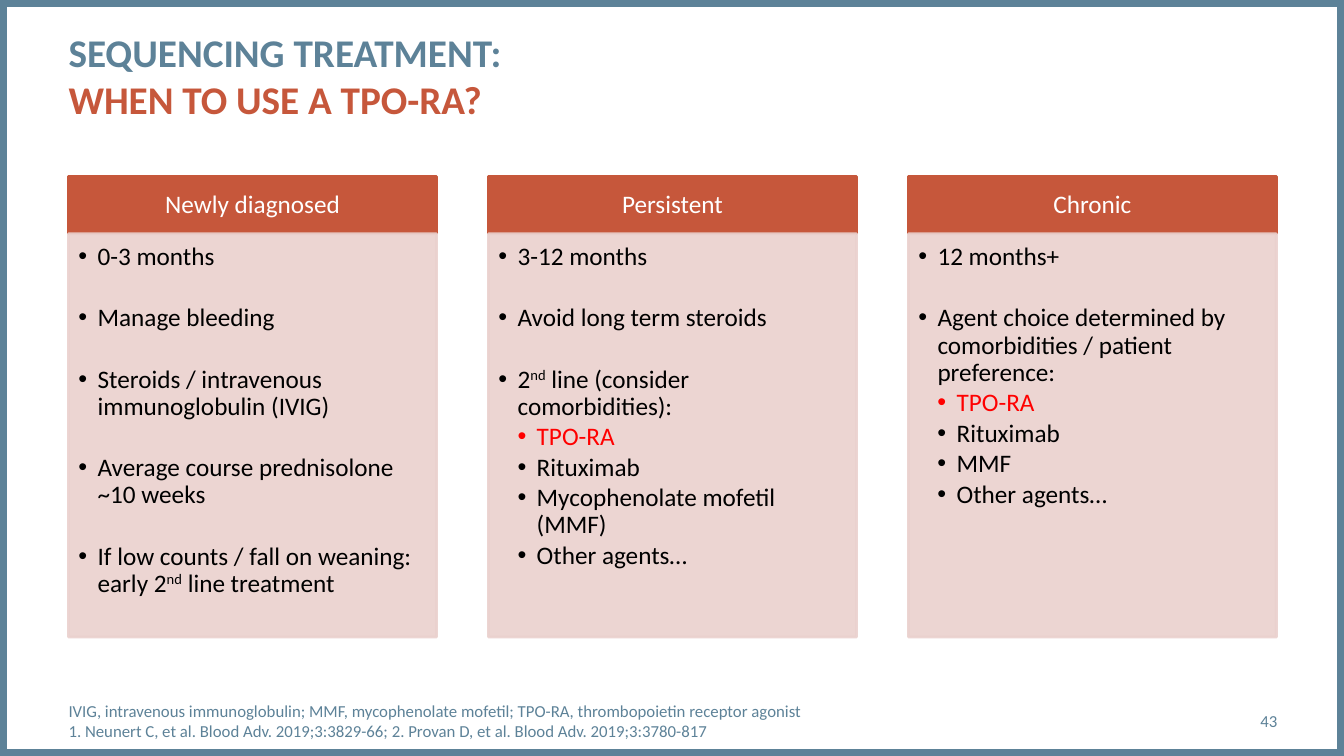
from dataclasses import dataclass
from lxml import etree
from pptx import Presentation
from pptx.dml.color import RGBColor
from pptx.enum.shapes import MSO_SHAPE
from pptx.enum.text import MSO_ANCHOR, MSO_AUTO_SIZE, PP_ALIGN
from pptx.oxml.ns import qn
from pptx.util import Inches, Pt

RECT = MSO_SHAPE.RECTANGLE
TOP, MIDDLE = MSO_ANCHOR.TOP, MSO_ANCHOR.MIDDLE
LEFT, CENTER, RIGHT = PP_ALIGN.LEFT, PP_ALIGN.CENTER, PP_ALIGN.RIGHT
NO_FIT = MSO_AUTO_SIZE.NONE

TITLE = ("SEQUENCING TREATMENT:", "WHEN TO USE A TPO-RA?")
STAGES = [
    ("Newly diagnosed", [
        (1, "0-3 months"),
        (1, "Manage bleeding"),
        (1, "Steroids / intravenous immunoglobulin (IVIG)"),
        (1, "Average course prednisolone ~10 weeks"),
        (1, "If low counts / fall on weaning: early 2^nd^ line treatment"),
    ]),
    ("Persistent", [
        (1, "3-12 months"),
        (1, "Avoid long term steroids"),
        (1, "2^nd^ line (consider comorbidities):"),
        (2, "TPO-RA"),
        (2, "Rituximab"),
        (2, "Mycophenolate mofetil (MMF)"),
        (2, "Other agents…"),
    ]),
    ("Chronic", [
        (1, "12 months+"),
        (1, "Agent choice determined by comorbidities / patient preference:"),
        (2, "TPO-RA"),
        (2, "Rituximab"),
        (2, "MMF"),
        (2, "Other agents…"),
    ]),
]
HIGHLIGHTED = "TPO-RA"
FOOTNOTE = (
    "IVIG, intravenous immunoglobulin; MMF, mycophenolate mofetil; TPO-RA, thrombopoietin receptor agonist",
    "1. Neunert C, et al. Blood Adv. 2019;3:3829-66; 2. Provan D, et al. Blood Adv. 2019;3:3780-817",
)
PAGE = "43"


@dataclass(frozen=True)
class Theme:
    font: str = "Calibri"
    blue: str = "5D8298"
    rust: str = "C6573B"
    pink: str = "EAD1CE"
    red: str = "FF0000"
    black: str = "000000"
    white: str = "FFFFFF"
    title: int = 28
    text: int = 18
    small: int = 12


THEME = Theme()
WIDTH, HEIGHT = 13.33, 7.5
MARGIN, RIGHT_EDGE = 0.68, 12.66
COL_W, HEAD_Y, HEAD_H, BODY_H = 3.65, 1.75, 0.57, 4
STEP = (RIGHT_EDGE - MARGIN - COL_W) / (len(STAGES) - 1)
INDENT = 0.19


def set_format(obj, values):
    for name, value in values.items():
        setattr(obj, name, value)


def frame_text(s, anchor, insets=(0, 0, 0, 0)):
    tf = s.text_frame
    set_format(tf, {"word_wrap": True, "auto_size": NO_FIT, "vertical_anchor": anchor})
    sides = ("margin_left", "margin_top", "margin_right", "margin_bottom")
    set_format(tf, {side: Inches(v) for side, v in zip(sides, insets)})
    return tf


def add_run(p, text, size, color, bold=False):
    r = p.add_run()
    r.text = text
    set_format(r.font, {"name": THEME.font, "size": Pt(size), "bold": bold})
    r.font.color.rgb = RGBColor.from_string(color)
    return r


def add_box(slide, x, y, w, h, fill, line, weight):
    s = slide.shapes.add_shape(RECT, Inches(x), Inches(y), Inches(w), Inches(h))
    s.shadow.inherit = False
    if fill:
        s.fill.solid()
        s.fill.fore_color.rgb = RGBColor.from_string(fill)
    else:
        s.fill.background()
    s.line.color.rgb = RGBColor.from_string(line)
    s.line.width = Pt(weight)
    return s


def add_small_text(slide, x, w, lines, align):
    s = slide.shapes.add_textbox(Inches(x), Inches(6.95), Inches(w), Inches(0.4))
    p = frame_text(s, MIDDLE).paragraphs[0]
    p.alignment = align
    for i, line in enumerate(lines):
        if i:
            p.add_line_break()
        add_run(p, line, THEME.small, THEME.blue)


def add_title(slide):
    s = slide.shapes.title
    set_format(s, {"left": Inches(MARGIN), "top": Inches(0.28),
                   "width": Inches(9.56), "height": Inches(0.94)})
    p = frame_text(s, TOP).paragraphs[0]
    p.alignment = LEFT
    add_run(p, TITLE[0], THEME.title, THEME.blue, True)
    p.add_line_break()
    add_run(p, TITLE[1], THEME.title, THEME.rust, True)


def add_bullet(p, level, text, first):
    before = 22 if level == 1 and not first else 0
    set_format(p, {"alignment": LEFT, "level": level, "line_spacing": 0.9,
                   "space_before": Pt(before), "space_after": Pt(2.3)})
    pPr = p._p.get_or_add_pPr()
    pPr.set("marL", str(Inches(INDENT * level)))
    pPr.set("indent", str(-Inches(INDENT)))
    etree.SubElement(pPr, qn("a:buFont")).set("typeface", "Arial")
    etree.SubElement(pPr, qn("a:buChar")).set("char", "•")
    color = THEME.red if text == HIGHLIGHTED else THEME.black
    for i, part in enumerate(text.split("^")):
        r = add_run(p, part, THEME.text, color)
        if i % 2:
            r.font._element.set("baseline", "30000")


def add_stage(slide, x, name, items):
    head = add_box(slide, x, HEAD_Y, COL_W, HEAD_H, THEME.rust, THEME.rust, 2)
    p = frame_text(head, MIDDLE, (0.14, 0.08, 0.14, 0.08)).paragraphs[0]
    set_format(p, {"alignment": CENTER, "line_spacing": 0.9})
    add_run(p, name, THEME.text, THEME.white)

    body = add_box(slide, x, HEAD_Y + HEAD_H, COL_W, BODY_H, THEME.pink, THEME.pink, 2)
    for clr in body._element.spPr.iter(qn("a:srgbClr")):
        etree.SubElement(clr, qn("a:alpha")).set("val", "90000")
    tf = frame_text(body, TOP, (0.1, 0.1, 0.14, 0.16))
    for i, (level, text) in enumerate(items):
        p = tf.add_paragraph() if i else tf.paragraphs[0]
        add_bullet(p, level, text, i == 0)


def main():
    prs = Presentation()
    set_format(prs, {"slide_width": Inches(WIDTH), "slide_height": Inches(HEIGHT)})
    slide = prs.slides.add_slide(prs.slide_layouts[5])
    add_box(slide, 0, 0, WIDTH, HEIGHT, None, THEME.blue, 10)
    add_title(slide)
    for i, (name, items) in enumerate(STAGES):
        add_stage(slide, MARGIN + i * STEP, name, items)
    add_small_text(slide, MARGIN, 10.8, FOOTNOTE, LEFT)
    add_small_text(slide, 11.5, 1.17, [PAGE], RIGHT)
    prs.save("out.pptx")


if __name__ == "__main__":
    main()
